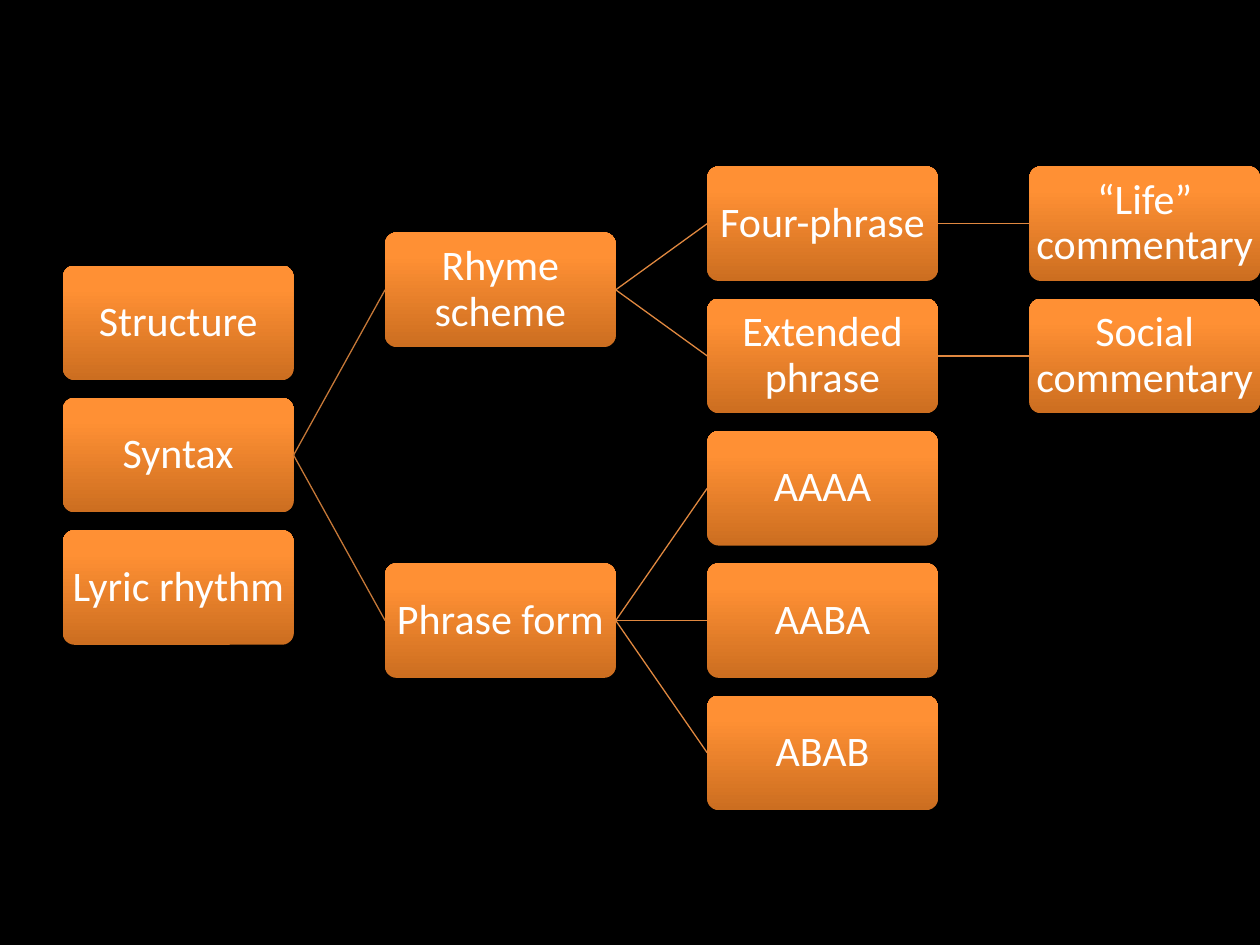
import copy

import pptx
import pptx.dml.color
import pptx.enum.shapes
import pptx.enum.text
import pptx.oxml.ns
import pptx.util

RGBColor = pptx.dml.color.RGBColor
Inches = pptx.util.Inches
Pt = pptx.util.Pt
qn = pptx.oxml.ns.qn

BLACK = RGBColor(0x00, 0x00, 0x00)
WHITE = RGBColor(0xFF, 0xFF, 0xFF)
FIRST_LINE = RGBColor(0xC6, 0x78, 0x38)
SECOND_LINE = RGBColor(0xE0, 0x88, 0x40)
GRADIENT = [
    (0, RGBColor(0xCC, 0x6E, 0x20)),
    (0.8, RGBColor(0xFF, 0x90, 0x34)),
    (1, RGBColor(0xFF, 0x91, 0x36)),
]

# Grid in inches: the last column ends at the right edge of the slide
SLIDE_WIDTH, SLIDE_HEIGHT = 10, 7.5
BOX_WIDTH, BOX_HEIGHT = 1.83, 0.91
LEFT, TOP = 0.5, 1.32
COLUMN_STEP = (SLIDE_WIDTH - LEFT - BOX_WIDTH) / 3
ROW_STEP = 1.05

# Label: (column, row)
TOPICS = {
    "Structure": (0, 0.75),
    "Syntax": (0, 1.75),
    "Lyric rhythm": (0, 2.75),
    "Rhyme scheme": (1, 0.5),
    "Phrase form": (1, 3),
    "Four-phrase": (2, 0),
    "Extended phrase": (2, 1),
    "AAAA": (2, 2),
    "AABA": (2, 3),
    "ABAB": (2, 4),
    "“Life” commentary": (3, 0),
    "Social commentary": (3, 1),
}
BRANCHES = {
    "Syntax": ["Rhyme scheme", "Phrase form"],
    "Rhyme scheme": ["Four-phrase", "Extended phrase"],
    "Phrase form": ["AAAA", "AABA", "ABAB"],
    "Four-phrase": ["“Life” commentary"],
    "Extended phrase": ["Social commentary"],
}
LEFT_SITE, RIGHT_SITE = 1, 3

# The rounded corners already inset the text a little
MARGIN = Inches(0.01)
FRAME_FORMAT = {
    "word_wrap": True,
    "vertical_anchor": pptx.enum.text.MSO_ANCHOR.MIDDLE,
    "margin_left": MARGIN,
    "margin_right": MARGIN,
    "margin_top": MARGIN,
    "margin_bottom": MARGIN,
}
PARAGRAPH_FORMAT = {"alignment": pptx.enum.text.PP_ALIGN.CENTER, "line_spacing": 0.9}
FONT_FORMAT = {"name": "Calibri", "size": Pt(24)}


def apply_format(target, values):
    for name, value in values.items():
        setattr(target, name, value)


def fill_gradient(shape):
    shape.fill.gradient()
    shape.fill.gradient_angle = 90
    # The default gradient has two stops; add a third
    stop_list = shape.fill._xPr.find(".//" + qn("a:gsLst"))
    stop_list.append(copy.deepcopy(stop_list[-1]))
    for stop, (position, color) in zip(shape.fill.gradient_stops, GRADIENT):
        stop.position = position
        stop.color.rgb = color


def add_topic(page, label, column, row):
    box = page.shapes.add_shape(
        pptx.enum.shapes.MSO_SHAPE.ROUNDED_RECTANGLE,
        Inches(LEFT + column * COLUMN_STEP), Inches(TOP + row * ROW_STEP),
        Inches(BOX_WIDTH), Inches(BOX_HEIGHT))
    box.adjustments[0] = 0.1
    box.shadow.inherit = False
    box.line.fill.background()
    fill_gradient(box)
    apply_format(box.text_frame, FRAME_FORMAT)
    para = box.text_frame.paragraphs[0]
    apply_format(para, PARAGRAPH_FORMAT)
    span = para.add_run()
    span.text = label
    apply_format(span.font, FONT_FORMAT)
    span.font.color.rgb = WHITE
    return box


def add_branch(page, parent, child, color):
    branch = page.shapes.add_connector(
        pptx.enum.shapes.MSO_CONNECTOR.STRAIGHT, 0, 0, 0, 0)
    branch.begin_connect(parent, RIGHT_SITE)
    branch.end_connect(child, LEFT_SITE)
    branch.line.color.rgb = color
    branch.line.width = Pt(0.75)
    properties = branch._element.spPr
    properties.append(properties.makeelement(qn("a:effectLst"), {}))


def main():
    deck = pptx.Presentation()
    deck.slide_width = Inches(SLIDE_WIDTH)
    deck.slide_height = Inches(SLIDE_HEIGHT)
    page = deck.slides.add_slide(deck.slide_layouts[6])
    page.background.fill.solid()
    page.background.fill.fore_color.rgb = BLACK

    # Topic boxes
    boxes = {label: add_topic(page, label, column, row)
             for label, (column, row) in TOPICS.items()}

    # Lines between the levels
    for parent, children in BRANCHES.items():
        color = FIRST_LINE if TOPICS[parent][0] == 0 else SECOND_LINE
        for child in children:
            add_branch(page, boxes[parent], boxes[child], color)

    deck.save("out.pptx")


if __name__ == "__main__":
    main()
